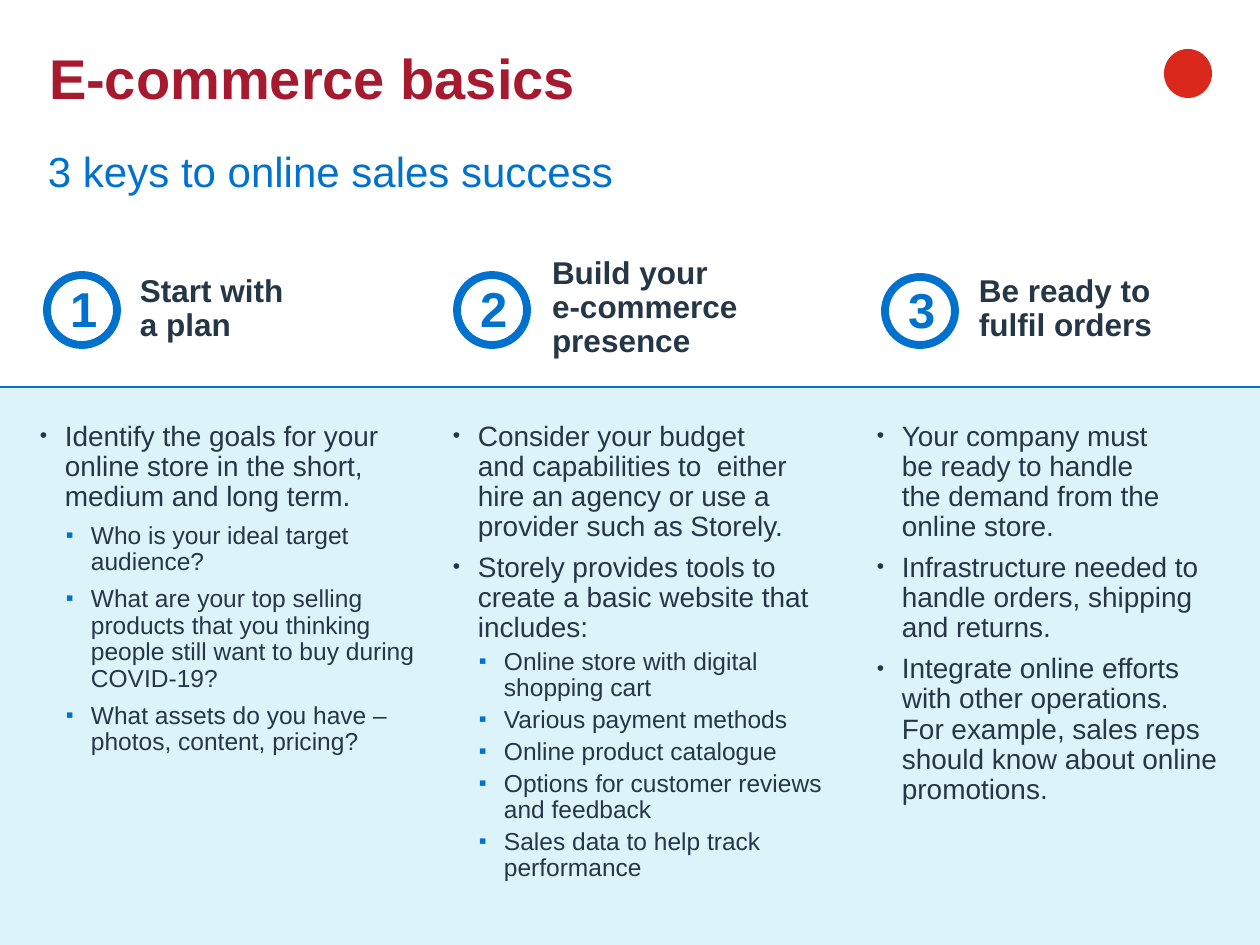
from lxml.etree import SubElement
from pptx import Presentation
from pptx.dml.color import RGBColor
from pptx.enum.shapes import MSO_CONNECTOR as Conn, MSO_SHAPE as Geo
from pptx.enum.text import MSO_ANCHOR as Anchor, MSO_AUTO_SIZE as Fit, PP_ALIGN as Align
from pptx.oxml.ns import qn
from pptx.util import Emu, Pt

FONT = "Arial"
RED, BLUE, INK, PALE = "A6192E", "0072CE", "253746", "DCF3F9"
LOGO = "DA291C"
TOP = 387

# Each step: circle box, heading box, heading, list left, sub-item gap, items (level, text).
STEPS = [
    ((47, 275, 70, 70), (140, 275, 199, 96), "Start with \na plan", 40, 6, [
        (0, "Identify the goals for your online store in the short, medium and long term."),
        (1, "Who is your ideal target audience?"),
        (1, "What are your top selling products that you thinking people still "
            "want to buy during COVID-19?"),
        (1, "What assets do you have – photos, content, pricing?"),
    ]),
    ((457, 275, 70, 70), (552, 257, 334, 131), "Build your \ne-commerce \npresence", 453, 3, [
        (0, "Consider your budget \nand capabilities to  either \n"
            "hire an agency or use a provider such as Storely."),
        (0, "Storely provides tools to create a basic website that includes:"),
        (1, "Online store with digital shopping cart"),
        (1, "Various payment methods"),
        (1, "Online product catalogue"),
        (1, "Options for customer reviews and feedback"),
        (1, "Sales data to help track performance"),
    ]),
    ((885, 277, 70, 68), (979, 275, 300, 96), "Be ready to \nfulfil orders", 877, 6, [
        (0, "Your company must \nbe ready to handle \nthe demand from the \nonline store."),
        (0, "Infrastructure needed to \nhandle orders, shipping \nand returns."),
        (0, "Integrate online efforts \nwith other operations. \n"
            "For example, sales reps should know about online promotions."),
    ]),
]


def px(n):
    """Turn pixels into EMU."""
    return Emu(round(n * 914400 / 126))


def hue(code):
    """Turn a hex string into a colour."""
    return RGBColor.from_string(code)


def frame(shape, pad=(0, 0, 0, 0), anchor=Anchor.TOP):
    """Set wrapping, insets and anchor, and return the text frame."""
    tf = shape.text_frame
    tf.word_wrap, tf.auto_size, tf.vertical_anchor = True, Fit.NONE, anchor
    tf.margin_left, tf.margin_top, tf.margin_right, tf.margin_bottom = map(px, pad)
    return tf


def write(para, text, size, color, bold=False, ls=0.9, gap=0, align=Align.LEFT):
    """Fill a paragraph with one run for each line."""
    para.alignment, para.line_spacing, para.space_before = align, ls, Pt(gap)
    for i, line in enumerate(text.split("\n")):
        if i:
            para.add_line_break()
        run = para.add_run()
        run.text = line
        font = run.font
        font.name, font.size, font.bold = FONT, Pt(size), bold
        font.color.rgb = hue(color)


def bullet(para, level):
    """Give a paragraph the bullet and indent of its level."""
    char, color, size = (("•", INK, 75), ("▪", BLUE, 90))[level]
    para.level = level
    ppr = para._p.get_or_add_pPr()
    ppr.set("marL", str(px(25 + 26 * level)))
    ppr.set("indent", str(-px(25)))
    clr = SubElement(ppr, qn("a:buClr"))
    SubElement(clr, qn("a:srgbClr"), val=color)
    SubElement(ppr, qn("a:buSzPct"), val=str(size * 1000))
    SubElement(ppr, qn("a:buFont"), typeface=FONT)
    SubElement(ppr, qn("a:buChar"), char=char)


def shape(slide, geo, box, fill=None, line=None):
    """Draw a flat preset shape."""
    item = slide.shapes.add_shape(geo, *map(px, box))
    item.shadow.inherit = False
    if fill:
        item.fill.solid()
        item.fill.fore_color.rgb = hue(fill)
    else:
        item.fill.background()
    if line:
        item.line.color.rgb, item.line.width = hue(line), Pt(4.5)
    else:
        item.line.fill.background()
    return item


def label(slide, box, text, size, color, bold=False):
    """Add a plain text box."""
    tf = frame(slide.shapes.add_textbox(*map(px, box)))
    write(tf.paragraphs[0], text, size, color, bold, gap=12)


def title(slide, text):
    """Place and format the title."""
    head = slide.shapes.title
    head.left, head.top, head.width, head.height = map(px, (49, 52, 1066, 125))
    tf = frame(head, (0, 0, 0, 66), Anchor.BOTTOM)
    write(tf.paragraphs[0], text, 32, RED, True, ls=0.85)


def points(slide, left, gap, items):
    """Add a two-level bullet list."""
    tf = frame(slide.shapes.add_textbox(*map(px, (left, 422, 389, 202))))
    for i, (level, text) in enumerate(items):
        para = tf.add_paragraph() if i else tf.paragraphs[0]
        write(para, text, 16 - 2 * level, INK, gap=gap if level else 6)
        bullet(para, level)


def badge(slide, box, num):
    """Draw a numbered ring."""
    ring = shape(slide, Geo.OVAL, box, line=BLUE)
    tf = frame(ring, (13, 6, 13, 10), Anchor.MIDDLE)
    write(tf.paragraphs[0], str(num), 28, BLUE, True, ls=1.0, align=Align.CENTER)


def rule(slide, y):
    """Draw a thin line across the slide."""
    line = slide.shapes.add_connector(Conn.STRAIGHT, *map(px, (0, y, 1260, y)))
    line.line.color.rgb, line.line.width = hue(BLUE), Pt(0.85)
    SubElement(line._element.spPr, qn("a:effectLst"))


def main():
    """Build the slide and save it."""
    prs = Presentation()
    prs.slide_width, prs.slide_height = px(1260), px(945)
    slide = prs.slides.add_slide(prs.slide_layouts[5])
    shape(slide, Geo.OVAL, (1164, 49, 48, 49), LOGO)
    shape(slide, Geo.RECTANGLE, (0, TOP, 1260, 945 - TOP), PALE)
    title(slide, "E-commerce basics")
    label(slide, (48, 151, 1160, 63), "3 keys to online sales success", 24, BLUE)
    for num, (ring, box, head, left, gap, items) in enumerate(STEPS, 1):
        label(slide, box, head, 18, INK, True)
        points(slide, left, gap, items)
        badge(slide, ring, num)
    rule(slide, TOP)
    prs.save("out.pptx")


if __name__ == "__main__":
    main()
